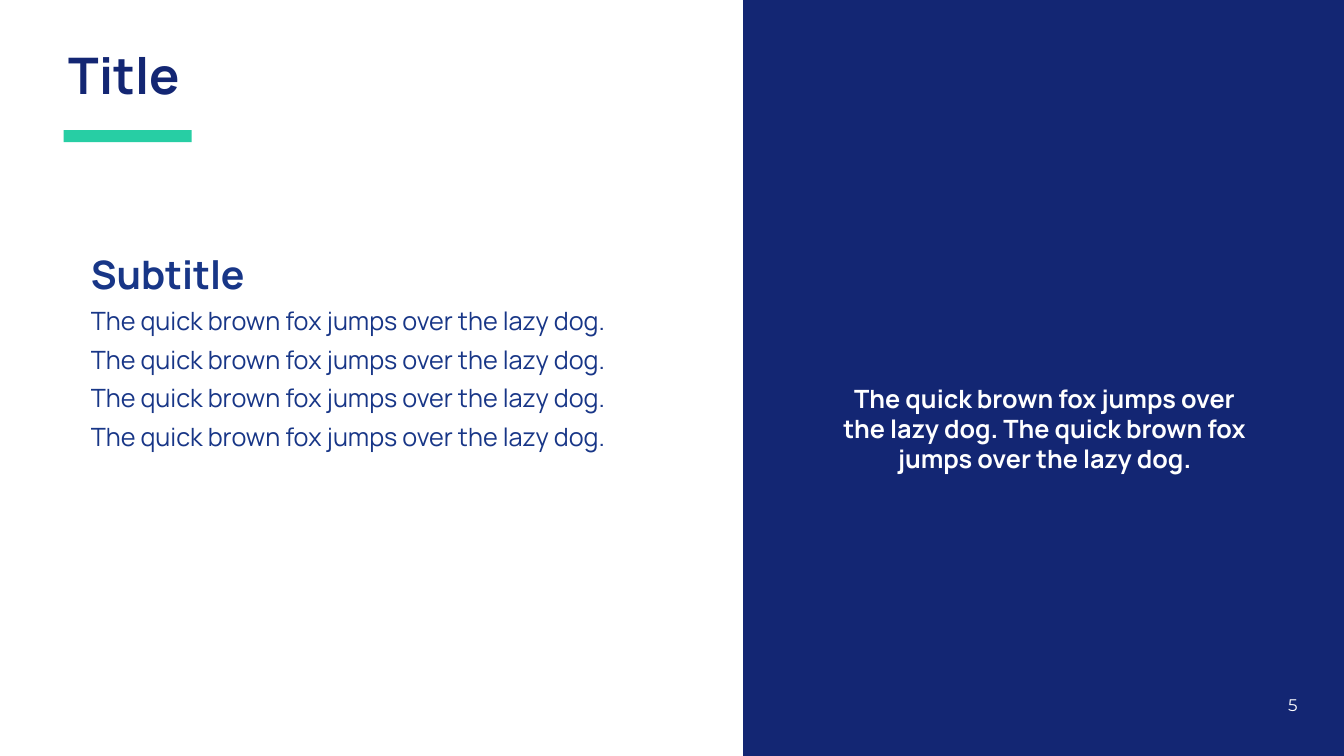
from dataclasses import dataclass

from pptx import Presentation
from pptx import util as u
from pptx.dml.color import RGBColor
from pptx.enum import shapes, text

WIDTH, HEIGHT = u.Inches(13.33), u.Inches(7.5)
WHITE = RGBColor(0xFF, 0xFF, 0xFF)
NAVY = RGBColor(0x13, 0x26, 0x73)
BLUE = RGBColor(0x18, 0x36, 0x87)
GREEN = RGBColor(0x27, 0xCE, 0xA4)
PANGRAM = "The quick brown fox jumps over the lazy dog."


@dataclass(frozen=True)
class Area:
    """A rectangle in percent of the slide's width and height."""
    left: float
    top: float
    width: float
    height: float

    def lengths(self) -> tuple[int, int, int, int]:
        return (round(WIDTH * self.left / 100), round(HEIGHT * self.top / 100),
                round(WIDTH * self.width / 100), round(HEIGHT * self.height / 100))


@dataclass(frozen=True)
class Block:
    area: Area
    color: RGBColor


PANEL = Block(Area(55.29, 0, 44.71, 100), NAVY)
TITLE_BAR = Block(Area(4.73, 17.2, 9.53, 1.6), GREEN)
TITLE_AREA = Area(4.73, 3.6, 86.27, 13.6)
BODY_AREA = Area(6.38, 32.4, 47.26, 29.33)
QUOTE_AREA = Area(61.89, 50, 31.66, 23.73)
NUMBER_AREA = Area(95.2, 90.93, 1.73, 4.53)


def add_block(page, block: Block):
    shape = page.shapes.add_shape(shapes.MSO_SHAPE.RECTANGLE, *block.area.lengths())
    shape.shadow.inherit = False
    shape.fill.solid()
    shape.fill.fore_color.rgb = block.color
    shape.line.fill.background()
    return shape


def set_frame(box, *, anchor=text.MSO_ANCHOR.TOP, wrap: bool = True):
    frame = box.text_frame
    frame.margin_left = frame.margin_right = u.Inches(0.05)
    frame.margin_top = frame.margin_bottom = u.Inches(0.05)
    frame.vertical_anchor = anchor
    frame.word_wrap = wrap
    frame.auto_size = text.MSO_AUTO_SIZE.NONE
    return frame


def add_frame(page, area: Area, **layout):
    return set_frame(page.shapes.add_textbox(*area.lengths()), **layout)


def write(para, words: str, *, size: float, color: RGBColor, bold: bool = False,
          font: str = "Manrope", align=text.PP_ALIGN.LEFT, before: float = 0,
          spacing: float = 1.0) -> None:
    para.alignment = align
    para.space_before = u.Pt(before)
    para.line_spacing = spacing
    span = para.add_run()
    span.text = words
    span.font.name = font
    span.font.size = u.Pt(size)
    span.font.bold = bold
    span.font.color.rgb = color


def main() -> None:
    deck = Presentation()
    deck.slide_width, deck.slide_height = WIDTH, HEIGHT
    page = deck.slides.add_slide(deck.slide_layouts.get_by_name("Title Only"))
    page.background.fill.solid()
    page.background.fill.fore_color.rgb = WHITE

    title = page.shapes.title
    title.left, title.top, title.width, title.height = TITLE_AREA.lengths()
    title_frame = set_frame(title, anchor=text.MSO_ANCHOR.MIDDLE)
    write(title_frame.paragraphs[0], "Title", size=36, color=NAVY, bold=True, spacing=0.9)

    panel = add_block(page, PANEL)
    title.element.addprevious(panel.element)
    add_block(page, TITLE_BAR)

    quote = add_frame(page, QUOTE_AREA)
    write(quote.paragraphs[0], f"{PANGRAM} {PANGRAM}", size=18, color=WHITE, bold=True,
          align=text.PP_ALIGN.CENTER)

    body = add_frame(page, BODY_AREA)
    write(body.paragraphs[0], "Subtitle", size=28, color=BLUE, bold=True)
    for _ in range(4):
        write(body.add_paragraph(), PANGRAM, size=18, color=BLUE, before=6)

    number = add_frame(page, NUMBER_AREA, anchor=text.MSO_ANCHOR.MIDDLE, wrap=False)
    write(number.paragraphs[0], "5", size=12, color=WHITE, font="Montserrat",
          align=text.PP_ALIGN.RIGHT)

    deck.save("out.pptx")


if __name__ == "__main__":
    main()
